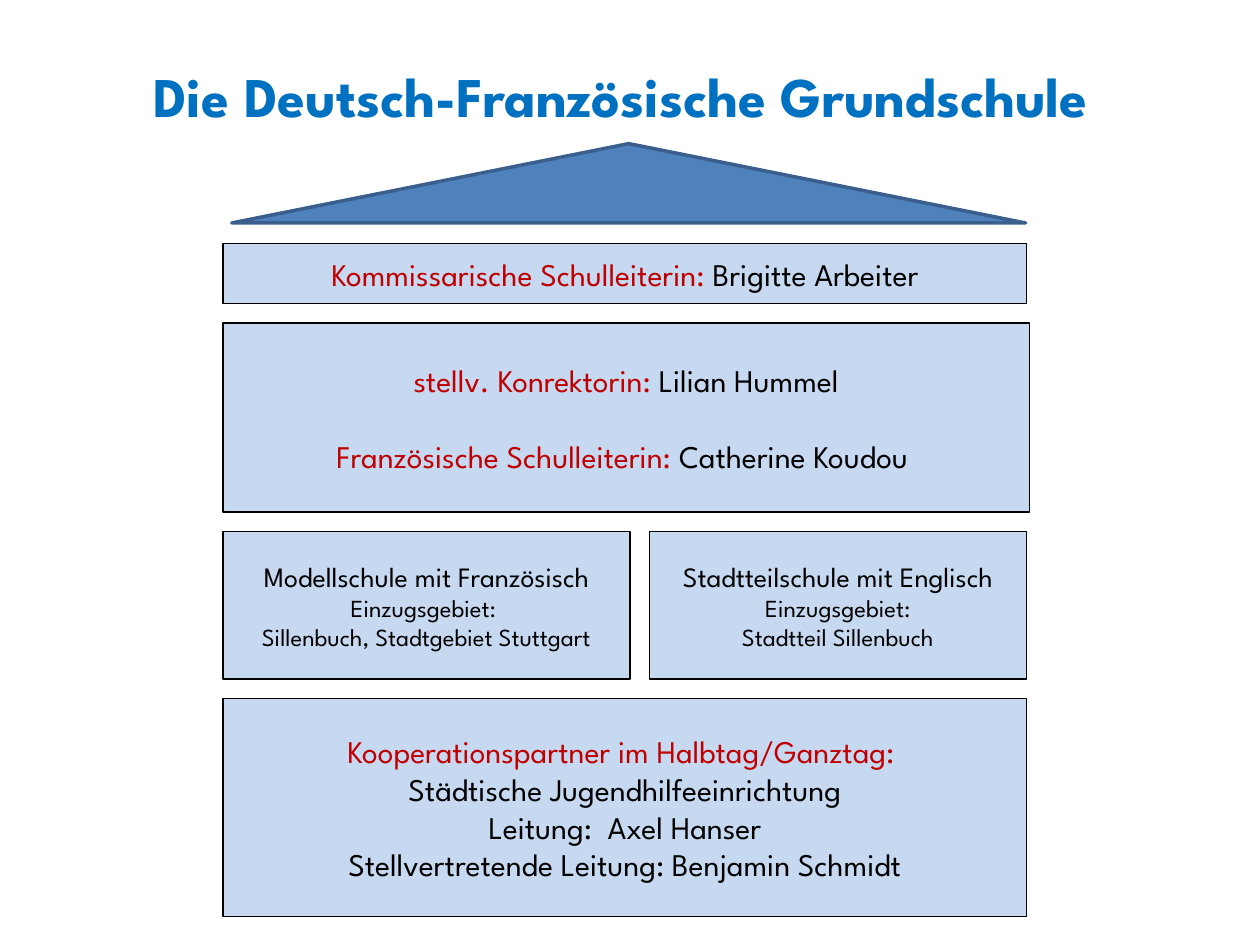
from pptx import Presentation
from pptx.dml.color import RGBColor
from pptx.enum.shapes import MSO_SHAPE
from pptx.enum.text import MSO_ANCHOR, PP_ALIGN
from pptx.util import Inches, Pt

FONT = "League Spartan"
BLACK, RED, TITLE_BLUE = "000000", "C00000", "0070C0"
BOX_FILL, ROOF_FILL, ROOF_LINE = "C6D9F1", "4F81BD", "3A5F8C"

TITLE = "Die Deutsch-Französische Grundschule "
TITLE_AREA = (0.2, 0.13, 9.58, 1.25)
ROOF_AREA = (1.84, 1.14, 6.3, 0.63)

LEFT, TOP, WIDTH, GAP = 1.77, 1.93, 6.38, 0.155

# Each row: height, then its boxes as (width, space between paragraphs, paragraphs);
# a paragraph is (size, [(text, colour), ...]).
ROWS = [
    (0.48, [(WIDTH, 0, [
        (18, [("Kommissarische Schulleiterin: ", RED), ("Brigitte Arbeiter", BLACK)]),
    ])]),
    (1.5, [(6.4, 21.7, [
        (18, [("stellv. Konrektorin: ", RED), ("Lilian Hummel", BLACK)]),
        (18, [("Französische Schulleiterin: ", RED), ("Catherine Koudou ", BLACK)]),
    ])]),
    (1.17, [
        (3.23, 0, [
            (16, [("Modellschule mit Französisch", BLACK)]),
            (14, [("Einzugsgebiet: ", BLACK)]),
            (14, [("Sillenbuch, Stadtgebiet Stuttgart", BLACK)]),
        ]),
        (2.99, 0, [
            (16, [("Stadtteilschule mit Englisch", BLACK)]),
            (14, [("Einzugsgebiet:", BLACK)]),
            (14, [("Stadtteil Sillenbuch", BLACK)]),
        ]),
    ]),
    (1.73, [(WIDTH, 0, [
        (18, [("Kooperationspartner im Halbtag/Ganztag: ", RED)]),
        (18, [("Städtische Jugendhilfeeinrichtung", BLACK)]),
        (18, [("Leitung:  Axel Hanser", BLACK)]),
        (18, [("Stellvertretende Leitung: Benjamin Schmidt", BLACK)]),
    ])]),
]


def color(hex_value):
    return RGBColor.from_string(hex_value)


def add_text(paragraph, text, size=18, text_color=BLACK, bold=False):
    paragraph.alignment = PP_ALIGN.CENTER
    run = paragraph.add_run()
    run.text = text
    run.font.name = FONT
    run.font.size = Pt(size)
    run.font.bold = bold
    run.font.color.rgb = color(text_color)


def add_shape(slide, kind, area, fill, line, line_width):
    shape = slide.shapes.add_shape(kind, *map(Inches, area))
    shape.shadow.inherit = False
    shape.fill.solid()
    shape.fill.fore_color.rgb = color(fill)
    shape.line.color.rgb = color(line)
    shape.line.width = Pt(line_width)
    return shape


def add_box(slide, area, spacing, paragraphs):
    box = add_shape(slide, MSO_SHAPE.RECTANGLE, area, BOX_FILL, BLACK, 0.75)
    frame = box.text_frame
    frame.word_wrap = False
    frame.vertical_anchor = MSO_ANCHOR.MIDDLE
    for index, (size, runs) in enumerate(paragraphs):
        paragraph = frame.add_paragraph() if index else frame.paragraphs[0]
        if index and spacing:
            paragraph.space_before = Pt(spacing)
        for text, text_color in runs:
            add_text(paragraph, text, size=size, text_color=text_color)


def add_title(slide):
    title = slide.shapes.title
    title.left, title.top, title.width, title.height = map(Inches, TITLE_AREA)
    title.text_frame.vertical_anchor = MSO_ANCHOR.MIDDLE
    add_text(title.text_frame.paragraphs[0], TITLE, size=32,
             text_color=TITLE_BLUE, bold=True)


def main():
    presentation = Presentation()
    presentation.slide_width = Inches(10)
    presentation.slide_height = Inches(7.5)
    slide = presentation.slides.add_slide(presentation.slide_layouts[5])

    add_title(slide)
    add_shape(slide, MSO_SHAPE.ISOSCELES_TRIANGLE, ROOF_AREA, ROOF_FILL, ROOF_LINE, 2)
    top = TOP
    for height, boxes in ROWS:
        left = LEFT
        for width, spacing, paragraphs in boxes:
            add_box(slide, (left, top, width, height), spacing, paragraphs)
            left += width + GAP
        top += height + GAP

    presentation.save("out.pptx")


if __name__ == "__main__":
    main()
